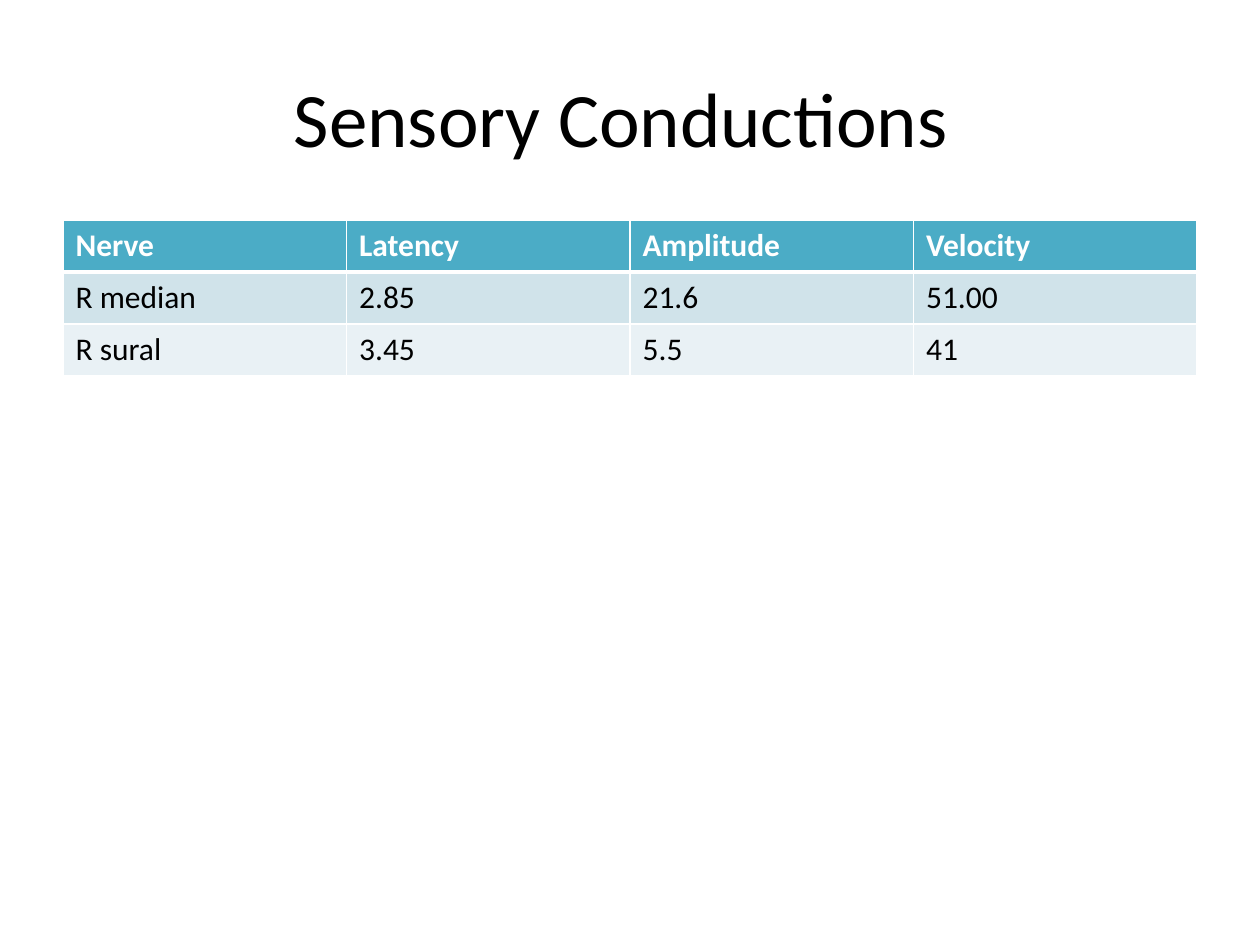
import lxml.etree
import pptx
import pptx.dml.color
import pptx.enum.text
import pptx.oxml.ns
import pptx.util

Inches, Pt = pptx.util.Inches, pptx.util.Pt
Align, Anchor = pptx.enum.text.PP_ALIGN, pptx.enum.text.MSO_ANCHOR
qn = pptx.oxml.ns.qn

TITLE = "Sensory Conductions "
ROWS = [
    ("Nerve", "Latency", "Amplitude", "Velocity"),
    ("R median", "2.85", "21.6", "51.00"),
    ("R sural", "3.45", "5.5", "41"),
]
FILLS = ["4BACC6", "D0E3EA", "E9F1F5"]
WHITE, BLACK = "FFFFFF", "000000"
LEFT, TOP, WIDTH, HIGH = 0.5, 1.75, 9, 0.41


def tint(item, color):
    item.rgb = pptx.dml.color.RGBColor.from_string(color)


def write(frame, text, size=18, color=BLACK, bold=False, align=Align.LEFT):
    para = frame.paragraphs[0]
    para.alignment = align
    run = para.add_run()
    run.text = text
    run.font.name = "Calibri"
    run.font.size = Pt(size)
    run.font.bold = bold
    tint(run.font.color, color)


def edge(cell, sides):
    props = cell._tc.get_or_add_tcPr()
    for spot, (side, width) in enumerate(sides.items()):
        line = lxml.etree.Element(qn(f"a:ln{side}"), w=str(Pt(width)))
        fill = lxml.etree.SubElement(line, qn("a:solidFill"))
        lxml.etree.SubElement(fill, qn("a:srgbClr"), val=WHITE)
        props.insert(spot, line)


def main():
    deck = pptx.Presentation()
    deck.slide_width, deck.slide_height = Inches(10), Inches(7.5)
    slide = deck.slides.add_slide(deck.slide_layouts[5])

    title = slide.shapes.title
    title.left, title.top = Inches(0.5), Inches(0.3)
    title.width, title.height = Inches(9), Inches(1.25)
    title.text_frame.vertical_anchor = Anchor.MIDDLE
    write(title.text_frame, TITLE, size=44, align=Align.CENTER)

    grid = slide.shapes.add_table(
        len(ROWS), len(ROWS[0]), Inches(LEFT), Inches(TOP),
        Inches(WIDTH), Inches(HIGH * len(ROWS))).table
    for r, (row, fill) in enumerate(zip(ROWS, FILLS)):
        head = r == 0
        for c, text in enumerate(row):
            cell = grid.cell(r, c)
            cell.fill.solid()
            tint(cell.fill.fore_color, fill)
            write(cell.text_frame, text, bold=head, color=WHITE if head else BLACK)
            edge(cell, {"L": 1, "R": 1, "T": 3 if r == 1 else 1, "B": 3 if head else 1})

    deck.save("out.pptx")


if __name__ == "__main__":
    main()
